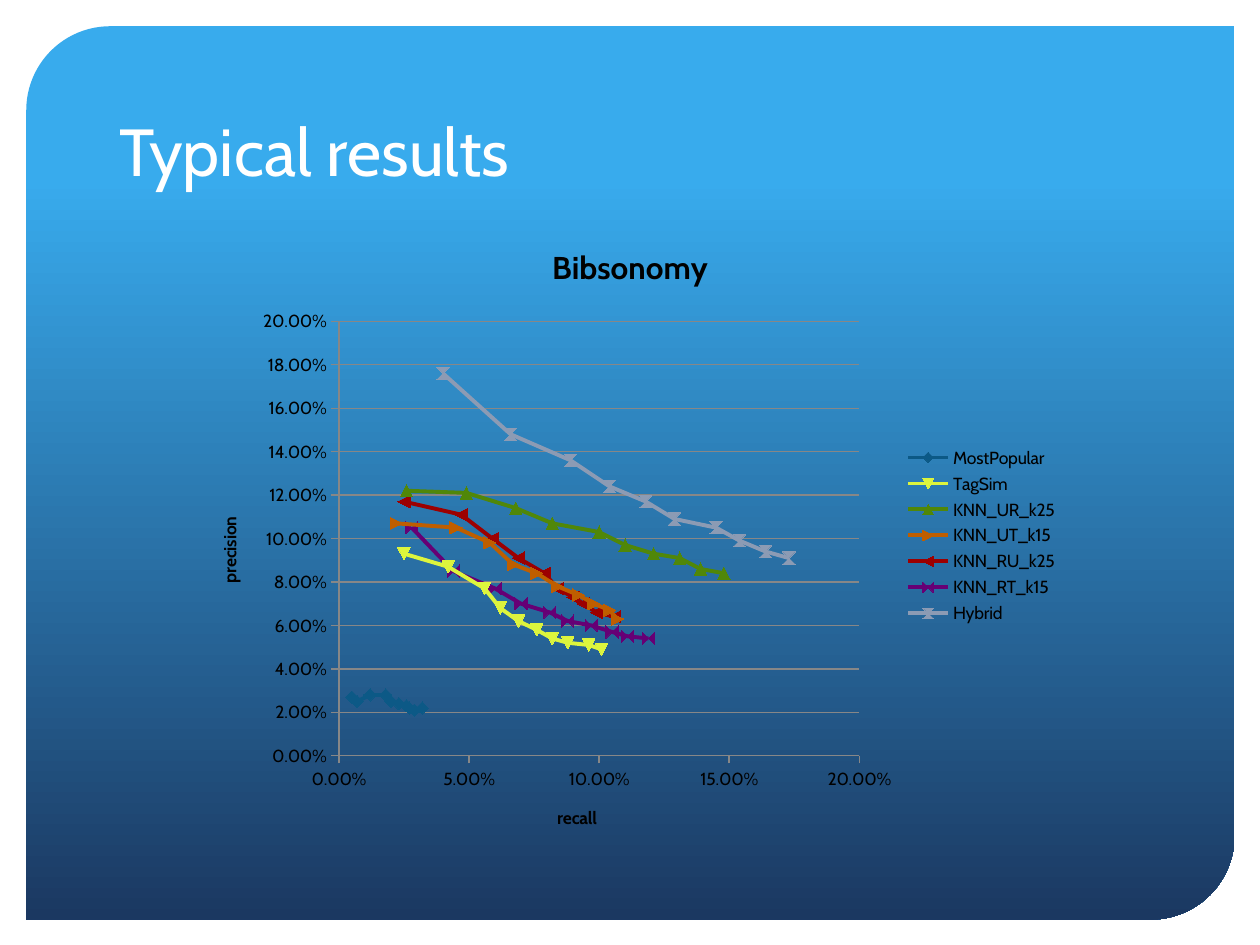
"""Build the Typical results slide with its precision and recall chart."""
from pptx import Presentation
from pptx import util as u
from pptx.chart.data import XyChartData
from pptx.dml.color import RGBColor
from pptx.enum import chart as charts, shapes, text
from pptx.oxml import parse_xml
from pptx.oxml.ns import nsdecls, qn

Pt = u.Pt
FONT = "Cabin"


def rgb(value):
    return RGBColor.from_string(value)


def style(font, size, color, bold=False):
    font.name, font.size, font.bold = FONT, Pt(size), bold
    font.color.rgb = rgb(color)


RESULTS = [
    ("MostPopular", "0C5986",
     [0.005, 0.007, 0.012, 0.018, 0.02, 0.023, 0.026, 0.027, 0.029, 0.032],
     [0.027, 0.025, 0.028, 0.028, 0.025, 0.024, 0.023, 0.022, 0.021, 0.022]),
    ("TagSim", "DDF53D",
     [0.025, 0.042, 0.056, 0.062, 0.069, 0.076, 0.082, 0.088, 0.096, 0.101],
     [0.093, 0.087, 0.077, 0.068, 0.062, 0.058, 0.054, 0.052, 0.051, 0.049]),
    ("KNN_UR_k25", "508709",
     [0.026, 0.049, 0.068, 0.082, 0.1, 0.11, 0.121, 0.131, 0.139, 0.148],
     [0.122, 0.121, 0.114, 0.107, 0.103, 0.097, 0.093, 0.091, 0.086, 0.084]),
    ("KNN_UT_k15", "BF5E00",
     [0.022, 0.045, 0.058, 0.067, 0.076, 0.084, 0.092, 0.098, 0.104, 0.107],
     [0.107, 0.105, 0.098, 0.088, 0.084, 0.078, 0.074, 0.07, 0.067, 0.063]),
    ("KNN_RU_k25", "9C0001",
     [0.025, 0.047, 0.059, 0.069, 0.079, 0.084, 0.09, 0.094, 0.099, 0.106],
     [0.117, 0.111, 0.1, 0.091, 0.084, 0.077, 0.073, 0.07, 0.066, 0.064]),
    ("KNN_RT_k15", "660075",
     [0.028, 0.044, 0.06, 0.07, 0.081, 0.088, 0.097, 0.105, 0.111, 0.119],
     [0.105, 0.085, 0.077, 0.07, 0.066, 0.062, 0.06, 0.057, 0.055, 0.054]),
    ("Hybrid", "8C9BB4",
     [0.04, 0.066, 0.089, 0.104, 0.118, 0.129, 0.145, 0.154, 0.164, 0.173],
     [0.176, 0.148, 0.136, 0.124, 0.117, 0.109, 0.105, 0.099, 0.094, 0.091]),
]

prs = Presentation()
prs.slide_width, prs.slide_height = Pt(720), Pt(540)
slide = prs.slides.add_slide(prs.slide_layouts[6])

panel = slide.shapes.add_shape(
    shapes.MSO_SHAPE.ROUND_2_DIAG_RECTANGLE, Pt(15), Pt(15), Pt(690.5), Pt(510.5))
panel.adjustments[0], panel.adjustments[1] = 0.094, 0
panel.shadow.inherit = False
panel.line.fill.background()
panel.fill.gradient()
panel.fill.gradient_angle = 270
for stop, (position, color) in zip(panel.fill.gradient_stops,
                                   [(0.17, "38ABED"), (1, "1B3861")]):
    stop.position, stop.color.rgb = position, rgb(color)

heading = slide.shapes.add_textbox(Pt(61.2), Pt(30.2), Pt(597), Pt(82)).text_frame
heading.word_wrap = True
heading.vertical_anchor = text.MSO_ANCHOR.BOTTOM
heading.text = "Typical results"
style(heading.paragraphs[0].runs[0].font, 38, "FFFFFF")

data = XyChartData(number_format="0.00%")
for name, color, recalls, precisions in RESULTS:
    points = data.add_series(name)
    for recall, precision in zip(recalls, precisions):
        points.add_data_point(recall, precision)
chart = slide.shapes.add_chart(
    charts.XL_CHART_TYPE.XY_SCATTER_SMOOTH,
    Pt(108), Pt(126), Pt(504), Pt(360), data).chart
style(chart.font, 10, "000000")

chart.has_title = True
chart.chart_title.text_frame.text = "Bibsonomy"
style(chart.chart_title.text_frame.paragraphs[0].runs[0].font, 18, "000000", True)
chart.has_legend = True
chart.legend.position = charts.XL_LEGEND_POSITION.RIGHT
chart.legend.include_in_layout = False

for axis, title, step, turn in [(chart.category_axis, "recall", 0.05, 0),
                                (chart.value_axis, "precision", 0.02, -90)]:
    axis.minimum_scale, axis.maximum_scale, axis.major_unit = 0, 0.2, step
    axis.major_tick_mark = charts.XL_TICK_MARK.OUTSIDE
    axis.tick_labels.number_format = "0.00%"
    axis.tick_labels.number_format_is_linked = False
    axis.has_major_gridlines = axis is chart.value_axis
    axis.format.line.color.rgb = rgb("878787")
    axis.format.line.width = Pt(0.75)
    label = axis.axis_title.text_frame
    label.text = title
    style(label.paragraphs[0].runs[0].font, 10, "000000", True)
    label._txBody.find(qn("a:bodyPr")).set("rot", str(turn * 60000))
gridline = chart.value_axis.major_gridlines.format.line
gridline.color.rgb, gridline.width = rgb("878787"), Pt(0.75)

plot = chart.plots[0]
plot.vary_by_categories = False
for index, (curve, result) in enumerate(zip(plot.series, RESULTS), 1):
    color = rgb(result[1])
    curve.smooth = True
    curve.format.line.color.rgb, curve.format.line.width = color, Pt(2.25)
    curve.marker.style = charts.XL_MARKER_STYLE.AUTOMATIC
    curve.marker.size = 7
    curve.marker.format.fill.solid()
    curve.marker.format.fill.fore_color.rgb = color
    curve.marker.format.line.color.rgb = color
    curve._element.find(qn("c:idx")).set("val", str(index))

area = chart._chartSpace.chart.plotArea
for layout in area.findall(qn("c:layout")):
    area.remove(layout)
bounds = [("x", 0.17), ("y", 0.16), ("w", 0.59), ("h", 0.69)]
area.insert(0, parse_xml(
    f'<c:layout {nsdecls("c")}><c:manualLayout><c:layoutTarget val="inner"/>'
    '<c:xMode val="edge"/><c:yMode val="edge"/>'
    + "".join(f'<c:{side} val="{share}"/>' for side, share in bounds)
    + "</c:manualLayout></c:layout>"))

prs.save("out.pptx")
